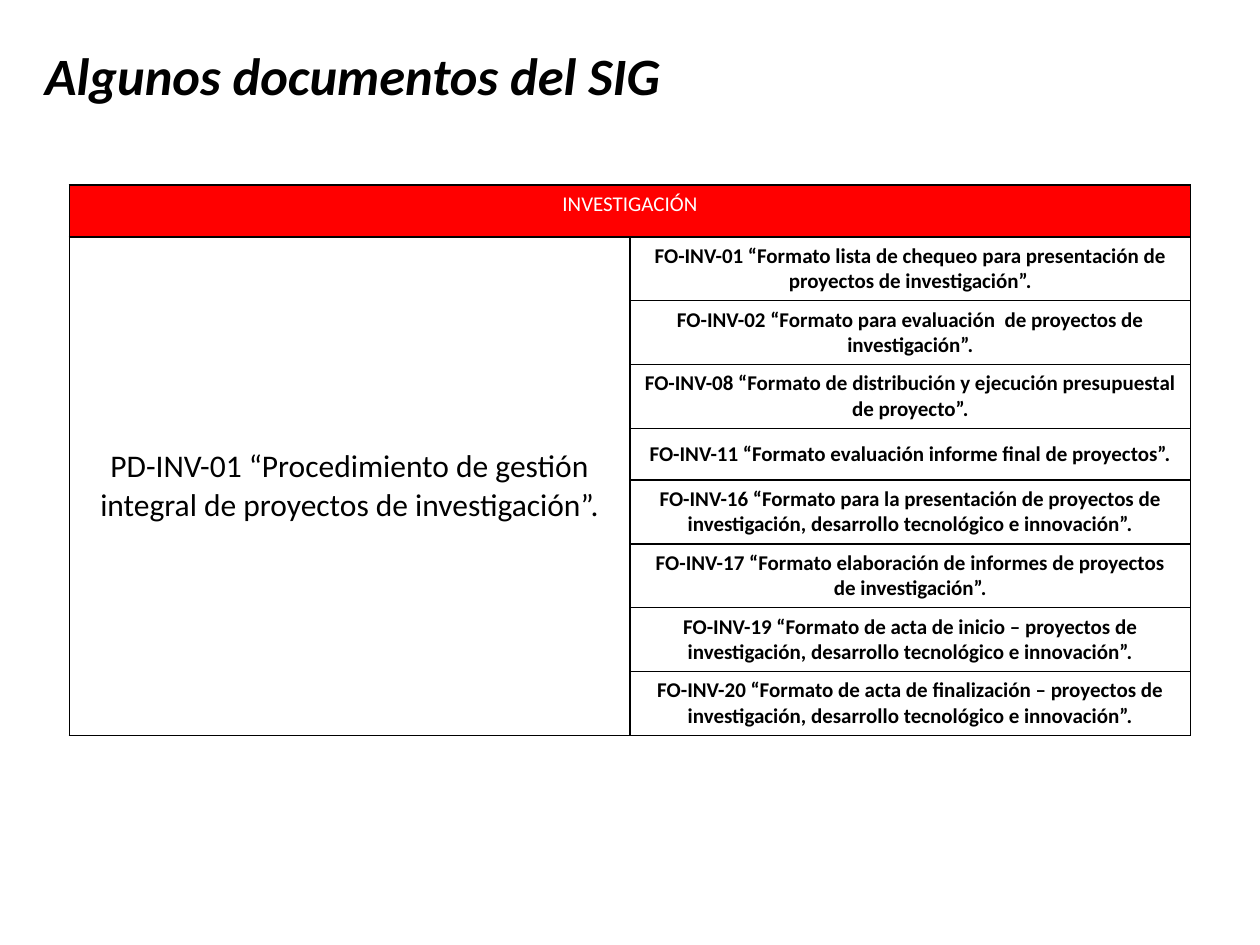
from lxml.etree import SubElement
from pptx import Presentation
from pptx.dml.color import RGBColor
from pptx.enum.text import MSO_ANCHOR, PP_ALIGN
from pptx.oxml.ns import qn
from pptx.util import Inches, Pt

COLORS = {"ink": "000000", "paper": "FFFFFF", "head": "FF0000"}
FORMS = [
    "FO-INV-01 “Formato lista de chequeo para presentación de proyectos de investigación”.",
    "FO-INV-02 “Formato para evaluación  de proyectos de investigación”.",
    "FO-INV-08 “Formato de distribución y ejecución presupuestal de proyecto”.",
    "FO-INV-11 “Formato evaluación informe final de proyectos”.",
    "FO-INV-16 “Formato para la presentación de proyectos de investigación, desarrollo tecnológico e innovación”.",
    "FO-INV-17 “Formato elaboración de informes de proyectos de investigación”.",
    "FO-INV-19 “Formato de acta de inicio – proyectos de investigación, desarrollo tecnológico e innovación”.",
    "FO-INV-20 “Formato de acta de finalización – proyectos de investigación, desarrollo tecnológico e innovación”.",
]


def write(frame, text, size=12, color="ink", bold=False, italic=False):
    para = frame.paragraphs[0]
    para.alignment = PP_ALIGN.CENTER
    run = para.add_run()
    run.text = text
    font = run.font
    font.name = "Calibri"
    font.size = Pt(size)
    font.bold = bold
    font.italic = italic
    font.color.rgb = RGBColor.from_string(COLORS[color])


class Deck:
    def __init__(self):
        self.prs = Presentation()
        self.prs.slide_width, self.prs.slide_height = Inches(10), Inches(7.5)
        self.slide = self.prs.slides.add_slide(self.prs.slide_layouts[5])

    def title(self, text, left, top, width, height):
        box = self.slide.shapes.title
        box.left, box.top = Inches(left), Inches(top)
        box.width, box.height = Inches(width), Inches(height)
        box.text_frame.word_wrap = True
        box.text_frame.vertical_anchor = MSO_ANCHOR.MIDDLE
        write(box.text_frame, text, size=30, bold=True, italic=True)

    def style(self, cell, fill):
        props = cell._tc.get_or_add_tcPr()
        for side in ("lnL", "lnR", "lnT", "lnB"):
            line = SubElement(props, qn(f"a:{side}"), w=str(Pt(1)))
            solid = SubElement(line, qn("a:solidFill"))
            SubElement(solid, qn("a:srgbClr"), val=COLORS["ink"])
        cell.fill.solid()
        cell.fill.fore_color.rgb = RGBColor.from_string(COLORS[fill])

    def table(self, head, main, items, left, top, width, row):
        count = len(items) + 1
        grid = self.slide.shapes.add_table(
            count, 2, Inches(left), Inches(top), Inches(width), Inches(row * count)
        ).table
        for line in grid.rows:
            line.height = Inches(row)
        for i in range(count):
            for j in range(2):
                cell = grid.cell(i, j)
                self.style(cell, "paper" if i else "head")
                if i:
                    cell.vertical_anchor = MSO_ANCHOR.MIDDLE
        grid.cell(0, 0).merge(grid.cell(0, 1))
        grid.cell(1, 0).merge(grid.cell(count - 1, 0))
        write(grid.cell(0, 0).text_frame, head, color="paper")
        write(grid.cell(1, 0).text_frame, main, size=18)
        for i, item in enumerate(items, 1):
            write(grid.cell(i, 1).text_frame, item, bold=True)


def main():
    deck = Deck()
    deck.title("Algunos documentos del SIG", 0.2, 0.29, 5.2, 0.61)
    deck.table(
        "INVESTIGACIÓN",
        "PD-INV-01 “Procedimiento de gestión integral de proyectos de investigación”.",
        FORMS, left=0.55, top=1.47, width=8.9, row=0.41,
    )
    deck.prs.save("out.pptx")


if __name__ == "__main__":
    main()
